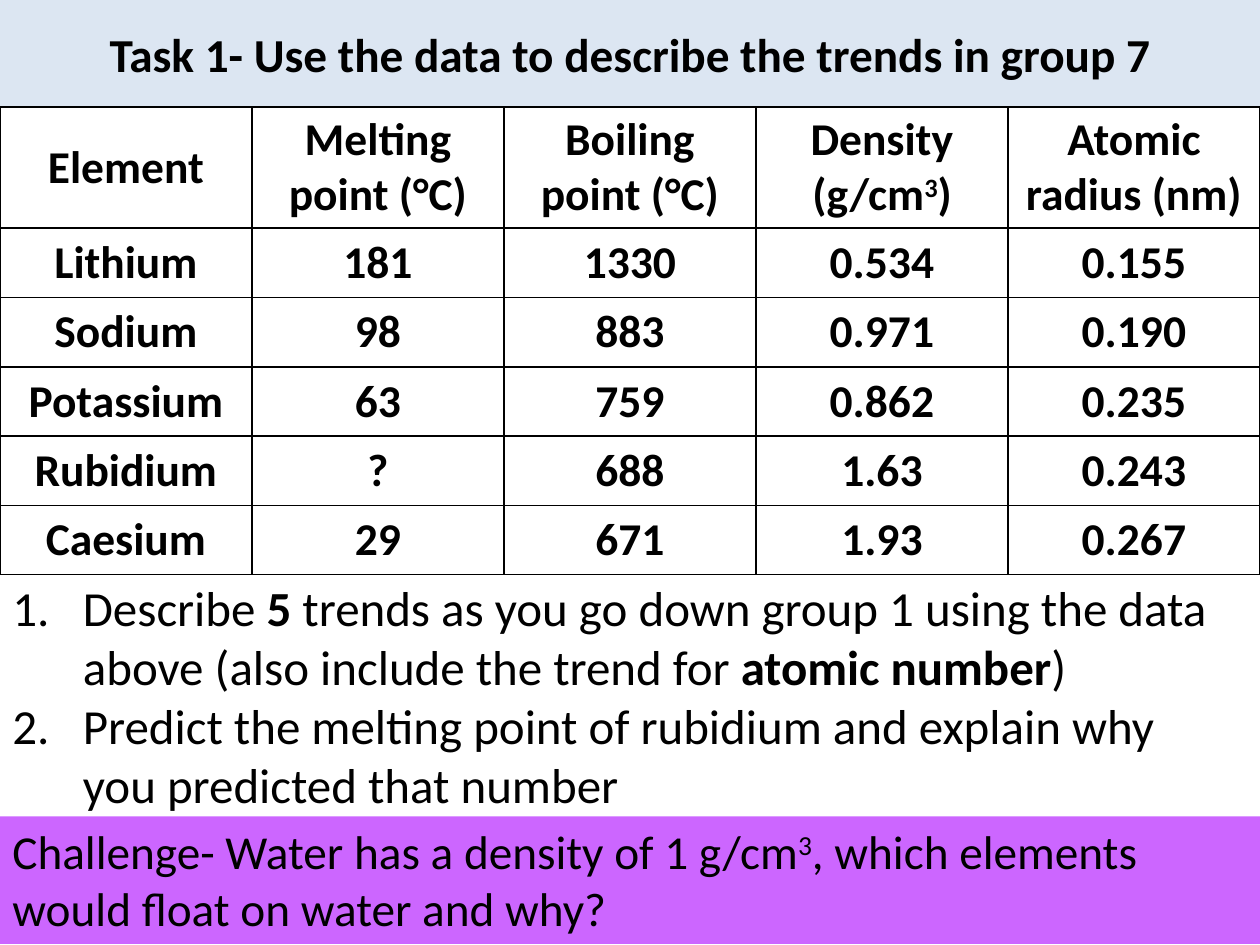
"""Build a chemistry task slide: data table, two questions and a challenge."""
from dataclasses import dataclass
from typing import NamedTuple

from lxml import etree
from pptx import Presentation
from pptx.dml.color import RGBColor
from pptx.enum.shapes import MSO_SHAPE
from pptx.enum.text import MSO_ANCHOR, PP_ALIGN
from pptx.oxml.ns import qn
from pptx.util import Inches, Pt

RECTANGLE = MSO_SHAPE.RECTANGLE
LEFT, CENTER = PP_ALIGN.LEFT, PP_ALIGN.CENTER
TOP, MIDDLE = MSO_ANCHOR.TOP, MSO_ANCHOR.MIDDLE
SLIDE_WIDTH, SLIDE_HEIGHT = Inches(10), Inches(7.5)


@dataclass(frozen=True)
class Theme:
    font: str = "Calibri"
    ink: str = "000000"
    paper: str = "FFFFFF"
    title_fill: str = "DCE6F2"
    challenge_fill: str = "CC66FF"
    table_size: float = 26
    banner_size: float = 27
    question_size: float = 28
    border_width: float = 1


class Span(NamedTuple):
    text: str
    bold: bool = False
    superscript: bool = False


class Band(NamedTuple):
    top: float
    height: float
    width: float = 1

    def box(self) -> tuple[int, int, int, int]:
        return (0, round(self.top * SLIDE_HEIGHT),
                round(self.width * SLIDE_WIDTH), round(self.height * SLIDE_HEIGHT))


class Banner(NamedTuple):
    band: Band
    spans: list[Span]
    fill: str
    align: PP_ALIGN
    anchor: MSO_ANCHOR


THEME = Theme()
TITLE_BAND = Band(0, 0.113)
TABLE_BAND = Band(0.113, 0.497)
QUESTION_BAND = Band(0.605, 0.265, 0.988)
CHALLENGE_BAND = Band(0.864, 0.135)
HEADER_HEIGHT, ROW_HEIGHT = Inches(0.96), Inches(0.55)

HEADERS = [
    [Span("Element", True)],
    [Span("Melting point (°C)", True)],
    [Span("Boiling point (°C)", True)],
    [Span("Density (g/cm", True), Span("3", True, True), Span(")", True)],
    [Span("Atomic radius (nm)", True)],
]
ELEMENTS = [
    ("Lithium", "181", "1330", "0.534", "0.155"),
    ("Sodium", "98", "883", "0.971", "0.190"),
    ("Potassium", "63", "759", "0.862", "0.235"),
    ("Rubidium", "?", "688", "1.63", "0.243"),
    ("Caesium", "29", "671", "1.93", "0.267"),
]
QUESTIONS = [
    [Span("Describe "), Span("5", True),
     Span(" trends as you go down group 1 using the data above (also include the trend for "),
     Span("atomic number", True), Span(")")],
    [Span("Predict the melting point of rubidium and explain why you predicted that number")],
]
BANNERS = [
    Banner(TITLE_BAND, [Span("Task 1- Use the data to describe the trends in group 7", True)],
           THEME.title_fill, CENTER, MIDDLE),
    Banner(CHALLENGE_BAND,
           [Span("Challenge- Water has a density of 1 g/cm"), Span("3", superscript=True),
            Span(", which elements would float on water and why?")],
           THEME.challenge_fill, LEFT, TOP),
]


def write(paragraph, spans: list[Span], size: float, align: PP_ALIGN) -> None:
    """Fill a paragraph with styled spans."""
    paragraph.alignment = align
    paragraph.font.name = THEME.font
    paragraph.font.size = Pt(size)
    paragraph.font.color.rgb = RGBColor.from_string(THEME.ink)
    for span in spans:
        run = paragraph.add_run()
        run.text = span.text
        run.font.bold = span.bold
        if span.superscript:
            run.font._element.set("baseline", "30000")


def number(paragraph) -> None:
    """Give a paragraph a hanging automatic number."""
    properties = paragraph._p.get_or_add_pPr()
    indent = Inches(0.56)
    properties.set("marL", str(indent))
    properties.set("indent", str(-indent))
    bullet = etree.Element(qn("a:buAutoNum"), type="arabicPeriod")
    properties.insert(0, bullet)


def border(cell) -> None:
    """Draw a thin line on all four sides of a cell."""
    properties = cell._tc.get_or_add_tcPr()
    for side in ("a:lnL", "a:lnR", "a:lnT", "a:lnB"):
        line = etree.SubElement(properties, qn(side), w=str(Pt(THEME.border_width)))
        fill = etree.SubElement(line, qn("a:solidFill"))
        etree.SubElement(fill, qn("a:srgbClr"), val=THEME.ink)


def draw_banner(slide, banner: Banner) -> None:
    """Draw a full-width coloured bar with text."""
    bar = slide.shapes.add_shape(RECTANGLE, *banner.band.box())
    bar.shadow.inherit = False
    bar.fill.solid()
    bar.fill.fore_color.rgb = RGBColor.from_string(banner.fill)
    bar.line.fill.background()
    frame = bar.text_frame
    frame.word_wrap = True
    frame.vertical_anchor = banner.anchor
    write(frame.paragraphs[0], banner.spans, THEME.banner_size, banner.align)


def draw_data(slide) -> None:
    """Draw the table of element properties."""
    rows = [HEADERS] + [[[Span(value, True)] for value in element] for element in ELEMENTS]
    table = slide.shapes.add_table(len(rows), len(HEADERS), *TABLE_BAND.box()).table
    table.first_row = table.horz_banding = False
    for index, row in enumerate(rows):
        table.rows[index].height = ROW_HEIGHT if index else HEADER_HEIGHT
        for column, spans in enumerate(row):
            cell = table.cell(index, column)
            cell.margin_left = cell.margin_right = Inches(0.07)
            cell.margin_top = cell.margin_bottom = Inches(0.04)
            cell.vertical_anchor = MIDDLE
            border(cell)
            cell.fill.solid()
            cell.fill.fore_color.rgb = RGBColor.from_string(THEME.paper)
            write(cell.text_frame.paragraphs[0], spans, THEME.table_size, CENTER)


def draw_questions(slide) -> None:
    """Draw the numbered questions."""
    frame = slide.shapes.add_textbox(*QUESTION_BAND.box()).text_frame
    frame.word_wrap = True
    for index, spans in enumerate(QUESTIONS):
        paragraph = frame.add_paragraph() if index else frame.paragraphs[0]
        write(paragraph, spans, THEME.question_size, LEFT)
        number(paragraph)


def main() -> None:
    """Assemble and save the slide."""
    deck = Presentation()
    deck.slide_width, deck.slide_height = SLIDE_WIDTH, SLIDE_HEIGHT
    slide = deck.slides.add_slide(deck.slide_layouts[6])
    title, challenge = BANNERS
    draw_banner(slide, title)
    draw_data(slide)
    draw_banner(slide, challenge)
    draw_questions(slide)
    deck.save("out.pptx")


if __name__ == "__main__":
    main()
